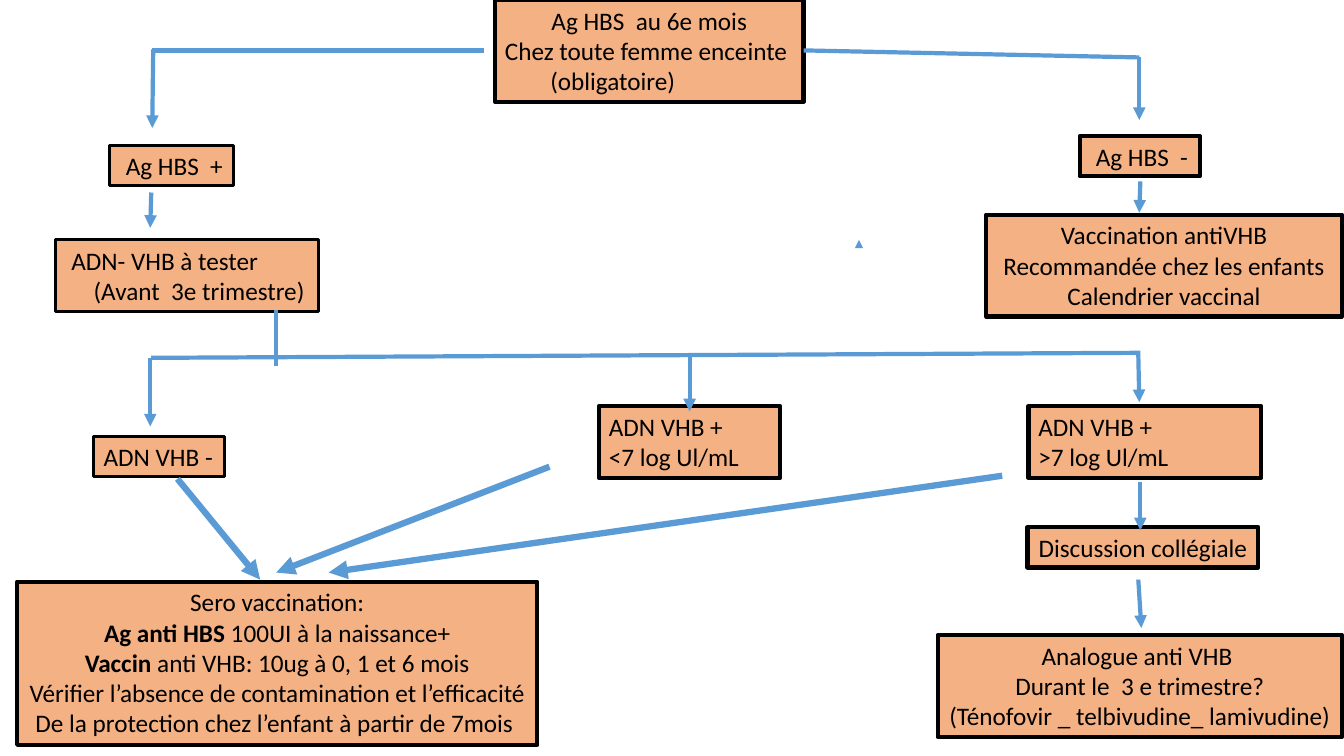
import pptx
import pptx.dml.color
import pptx.enum.shapes
import pptx.enum.text
import pptx.oxml
import pptx.oxml.ns
import pptx.util

Inches = pptx.util.Inches
Pt = pptx.util.Pt
RGBColor = pptx.dml.color.RGBColor
LEFT = pptx.enum.text.PP_ALIGN.LEFT
CENTER = pptx.enum.text.PP_ALIGN.CENTER

ORANGE = RGBColor(0xF4, 0xB1, 0x83)
BLUE = RGBColor(0x5B, 0x9B, 0xD5)
BLACK = RGBColor(0, 0, 0)
TEXT_FORMAT = {"name": "Calibri", "size": Pt(18)}
FRAME_FORMAT = {
    "margin_left": Inches(0.1), "margin_right": Inches(0.1),
    "margin_top": Inches(0.05), "margin_bottom": Inches(0.05),
    "vertical_anchor": pptx.enum.text.MSO_ANCHOR.TOP,
}
ONE_LINE, TWO_LINES, THREE_LINES, FIVE_LINES = 0.4, 0.71, 1.01, 1.62


def set_attributes(target, values):
    for name, value in values.items():
        setattr(target, name, value)


def add_node(slide, left, top, width, height, lines, align=CENTER, border=3):
    """Draw a box; a line is a text, or a dict with runs, align and indent."""
    shape = slide.shapes.add_shape(
        pptx.enum.shapes.MSO_SHAPE.RECTANGLE,
        Inches(left), Inches(top), Inches(width), Inches(height))
    shape.shadow.inherit = False
    shape.fill.solid()
    shape.fill.fore_color.rgb = ORANGE
    shape.line.color.rgb = BLACK
    shape.line.width = Pt(border)
    frame = shape.text_frame
    set_attributes(frame, FRAME_FORMAT)
    frame.word_wrap = len(lines) > 1
    for index, line in enumerate(lines):
        if isinstance(line, str):
            line = {"runs": [(line, False)]}
        paragraph = frame.paragraphs[0] if index == 0 else frame.add_paragraph()
        paragraph.alignment = line.get("align", align)
        if "indent" in line:
            properties = paragraph._p.get_or_add_pPr()
            properties.set("marL", str(Inches(line["indent"])))
        for text, bold in line["runs"]:
            run = paragraph.add_run()
            run.text = text
            set_attributes(run.font, TEXT_FORMAT)
            run.font.bold = bold
            run.font.color.rgb = BLACK


def add_link(slide, left, top, start, end, width=3, arrow=True):
    """Draw a line between two points given relative to left and top."""
    connector = slide.shapes.add_connector(
        pptx.enum.shapes.MSO_CONNECTOR.STRAIGHT,
        Inches(left + start[0]), Inches(top + start[1]),
        Inches(left + end[0]), Inches(top + end[1]))
    connector.line.color.rgb = BLUE
    connector.line.width = Pt(width)
    if arrow:
        head = pptx.oxml.parse_xml(
            f'<a:tailEnd {pptx.oxml.ns.nsdecls("a")} type="triangle"/>')
        connector.line._get_or_add_ln().append(head)
    connector._element.spPr.append(pptx.oxml.parse_xml(
        f'<a:effectLst {pptx.oxml.ns.nsdecls("a")}/>'))


def indented(text, indent):
    return {"runs": [(text, False)], "align": LEFT, "indent": indent}


def draw_screening(slide, left, top):
    add_node(slide, left + 3.4, top, 3.06, THREE_LINES, [
        "Ag HBS  au 6e mois",
        indented("Chez toute femme enceinte", 0),
        indented("(obligatoire)", 0.45)])
    add_link(slide, left, top, (0, 0.5), (3.29, 0.5), arrow=False)
    add_link(slide, left, top, (0.01, 0.49), (0, 1.27))
    add_link(slide, left, top, (6.46, 0.5), (9.79, 0.57), arrow=False)
    add_link(slide, left, top, (9.79, 0.57), (9.79, 1.19))
    add_link(slide, left, top, (7.01, 2.39), (7.01, 2.38), width=0.5)


def draw_positive_branch(slide, left, top):
    add_node(slide, left + 0.54, top, 1.23, ONE_LINE,
             [indented("Ag HBS  +", 0.06)], border=2.25)
    add_link(slide, left, top, (0.95, 0.47), (0.94, 0.82))
    add_node(slide, left, top + 0.94, 2.61, TWO_LINES, [
        indented("ADN- VHB à tester", 0.06),
        indented("(Avant \u00a03e trimestre)", 0.28)], border=2.25)
    add_link(slide, left, top, (2.19, 1.64), (2.19, 2.19), arrow=False)


def draw_negative_branch(slide, left, top):
    add_node(slide, left + 0.93, top, 1.19, ONE_LINE,
             [indented("Ag HBS  -", 0.06)])
    add_link(slide, left, top, (1.53, 0.45), (1.52, 0.76))
    add_node(slide, left, top + 0.78, 3.53, THREE_LINES, [
        "Vaccination antiVHB",
        "Recommandée chez les enfants",
        "Calendrier vaccinal"])


def draw_viral_load(slide, left, top):
    add_node(slide, left, top + 0.83, 1.3, ONE_LINE,
             ["ADN VHB -"], align=LEFT, border=2.25)
    for offset, width, load in ((5.01, 1.8, "<7 log Ul/mL"),
                                (9.27, 2.31, ">7 log Ul/mL")):
        add_node(slide, left + offset, top + 0.53, width, TWO_LINES,
                 ["ADN VHB +", load], align=LEFT)
    add_link(slide, left, top, (10.38, 0), (0.57, 0.05), arrow=False)
    for start, end in (((0.56, 0.05), (0.56, 0.73)),
                       ((5.91, 0.04), (5.91, 0.58)),
                       ((10.36, 0.02), (10.37, 0.49))):
        add_link(slide, left, top, start, end)


def draw_newborn_care(slide, left, top):
    add_node(slide, left, top + 1.14, 5.16, FIVE_LINES, [
        "Sero vaccination:",
        {"runs": [("Ag anti HBS ", True), ("100UI à la naissance+", False)]},
        {"runs": [("Vaccin", True),
                  (" anti VHB: 10ug à 0, 1 et 6 mois", False)]},
        "Vérifier l’absence de contamination et l’efficacité ",
        "De la protection chez l’enfant à partir de 7mois "])
    for start, end in (((1.59, 0.12), (2.41, 1.12)),
                       ((5.28, 0), (2.57, 1.05)),
                       ((9.77, 0.09), (3.09, 1.05))):
        add_link(slide, left, top, start, end, width=4.5)


def draw_maternal_treatment(slide, left, top):
    add_node(slide, left + 0.89, top + 0.45, 2.29, ONE_LINE,
             ["Discussion collégiale"])
    add_link(slide, left, top, (2.01, 0), (2.01, 0.48))
    add_link(slide, left, top, (1.99, 0.97), (2.02, 1.45))
    add_node(slide, left, top + 1.52, 4.01, THREE_LINES, [
        "Analogue anti VHB ",
        "Durant le  3\u00a0e trimestre?",
        "(Ténofovir _ telbivudine_ lamivudine)"])


def main():
    presentation = pptx.Presentation()
    presentation.slide_width = Inches(13.33)
    presentation.slide_height = Inches(7.5)
    slide = presentation.slides.add_slide(presentation.slide_layouts[6])
    draw_screening(slide, 1.51, 0)
    draw_positive_branch(slide, 0.55, 1.44)
    draw_negative_branch(slide, 9.78, 1.35)
    draw_viral_load(slide, 0.93, 3.5)
    draw_newborn_care(slide, 0.17, 4.63)
    draw_maternal_treatment(slide, 9.3, 4.78)
    presentation.save("out.pptx")


if __name__ == "__main__":
    main()
